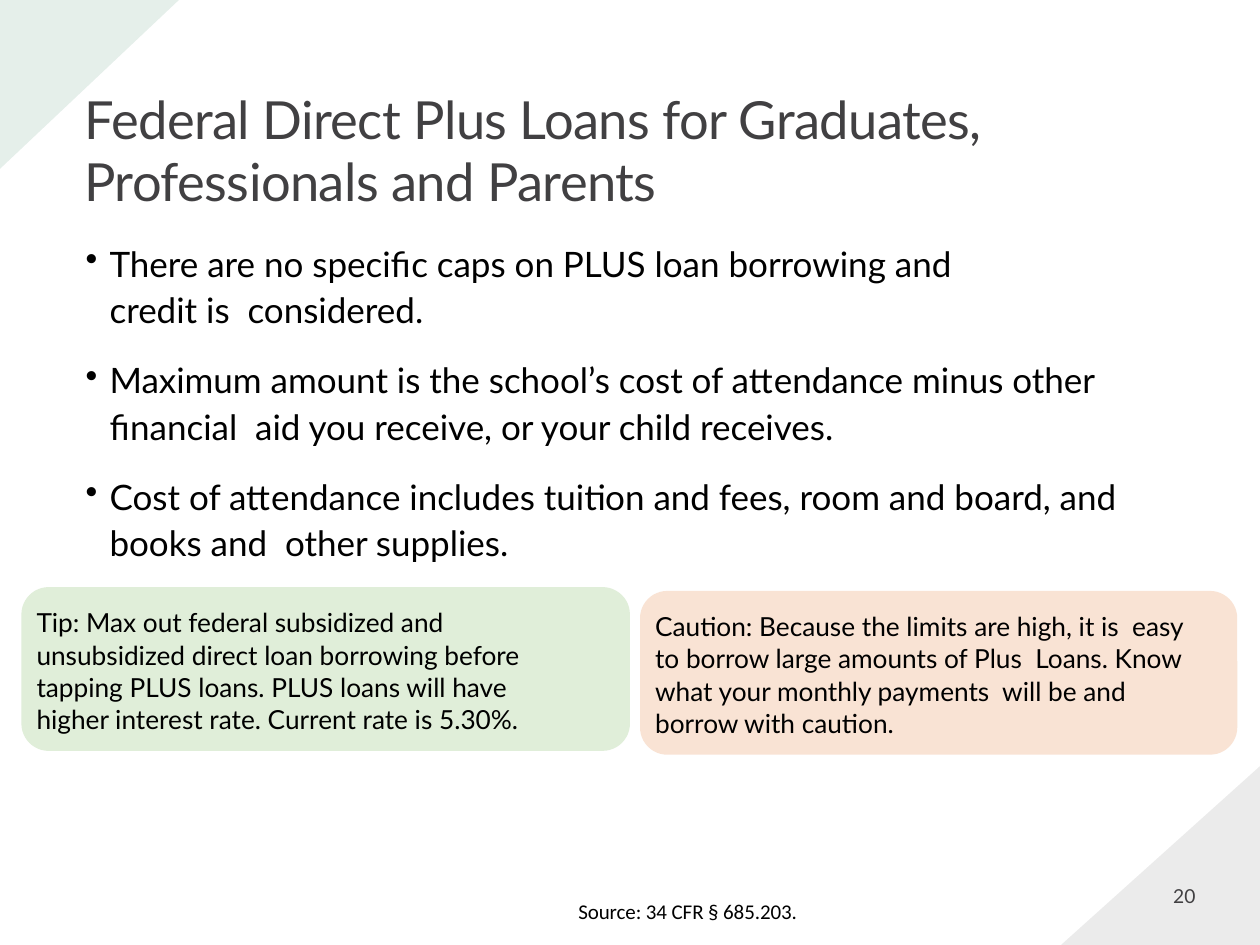
from lxml import etree
from pptx import Presentation
from pptx.dml.color import RGBColor
from pptx.enum.shapes import MSO_SHAPE
from pptx.enum.text import MSO_ANCHOR, MSO_AUTO_SIZE, PP_ALIGN
from pptx.oxml.ns import qn
from pptx.util import Inches, Pt

TRIANGLE = MSO_SHAPE.RIGHT_TRIANGLE
ROUNDED = MSO_SHAPE.ROUNDED_RECTANGLE
TOP, BOTTOM = MSO_ANCHOR.TOP, MSO_ANCHOR.BOTTOM
LEFT = PP_ALIGN.LEFT
NO_AUTOFIT = MSO_AUTO_SIZE.NONE

COLORS = {
    "text": "000000",
    "gray": "414042",
    "green": "056839",
    "tip": "E0EED9",
    "caution": "F9E3D4",
}
FONT = "Lato"
SOURCE_FONT = "Calibri"

TITLE = "Federal Direct Plus Loans for Graduates, Professionals and Parents"
# Each bullet: text, right margin in inches
BULLETS = [
    ("There are no specific caps on PLUS loan borrowing and credit is  considered.", 1),
    ("Maximum amount is the school’s cost of attendance minus other "
     "financial  aid you receive, or your child receives.", 0),
    ("Cost of attendance includes tuition and fees, room and board, and "
     "books and  other supplies.", 0),
]
TIP = ("Tip: Max out federal subsidized and unsubsidized direct loan borrowing "
       "before tapping PLUS loans. PLUS loans will have higher interest rate. "
       "Current rate is 5.30%.")
CAUTION = ("Caution: Because the limits are high, it is  easy to borrow large "
           "amounts of Plus  Loans. Know what your monthly payments  will be and "
           "borrow with caution.")


def rgb(name):
    return RGBColor.from_string(COLORS[name])


def inches(box):
    return [Inches(v) for v in box]


def setup_frame(tf, top_inset=0, anchor=TOP):
    tf.word_wrap = True
    tf.auto_size = NO_AUTOFIT
    tf.vertical_anchor = anchor
    tf.margin_left = tf.margin_right = tf.margin_bottom = 0
    tf.margin_top = Inches(top_inset)


def add_run(p, text, size, color="text", font=FONT, spacing=0):
    """Add a run; spacing is the letter spacing in points."""
    p.alignment = LEFT
    r = p.add_run()
    r.text = text
    r.font.size = Pt(size)
    r.font.name = font
    r.font.color.rgb = rgb(color)
    if spacing:
        r.font._element.set("spc", str(round(spacing * 100)))


def set_margins(p, left=0, right=0, indent=0):
    pPr = p._p.get_or_add_pPr()
    for key, value in (("marL", left), ("marR", right), ("indent", indent)):
        pPr.set(key, str(Inches(value)))


def add_text(s, box, text, size, line_spacing=None, top_inset=0, left=0, right=0, **style):
    tf = s.shapes.add_textbox(*inches(box)).text_frame
    setup_frame(tf, top_inset)
    p = tf.paragraphs[0]
    set_margins(p, left, right)
    if line_spacing:
        p.line_spacing = Pt(line_spacing)
    add_run(p, text, size, **style)


def add_filled(s, shape, box, color):
    sp = s.shapes.add_shape(shape, *inches(box))
    sp.shadow.inherit = False
    sp.fill.solid()
    sp.fill.fore_color.rgb = rgb(color)
    sp.line.fill.background()
    return sp


def add_corner(s, box, color, rotation, flip=False):
    sp = add_filled(s, TRIANGLE, box, color)
    sp.rotation = rotation
    if flip:
        sp._element.spPr.xfrm.set("flipV", "1")
    clr = sp._element.spPr.find(qn("a:solidFill"))[0]
    etree.SubElement(clr, qn("a:alpha")).set("val", "10000")


def add_title(s, box):
    title = s.shapes.title
    title.left, title.top, title.width, title.height = inches(box)
    tf = title.text_frame
    setup_frame(tf, 0.07, BOTTOM)
    p = tf.paragraphs[0]
    p.line_spacing = Pt(35)
    add_run(p, TITLE, 30, "gray", spacing=-0.35)


def add_bullets(s, box):
    tf = s.shapes.add_textbox(*inches(box)).text_frame
    setup_frame(tf, 0.01)
    for i, (text, right) in enumerate(BULLETS):
        p = tf.add_paragraph() if i else tf.paragraphs[0]
        set_margins(p, 0.2, right, -0.19)
        etree.SubElement(p._p.get_or_add_pPr(), qn("a:buChar")).set("char", "•")
        p.line_spacing = 1.1
        if i:
            p.space_before = Pt(13.9)
        add_run(p, text, 20, spacing=-0.04)


def add_card(s, box, color, text, right=0):
    x, y, w, h = box
    add_filled(s, ROUNDED, box, color)
    add_text(s, (x + 0.12, y + 0.1, 4.3, 1.08), text, 15, 18.4, 0.05, right=right)


def main():
    prs = Presentation()
    prs.slide_width, prs.slide_height = Inches(10), Inches(7.5)
    s = prs.slides.add_slide(prs.slide_layouts[5])

    # Corner decoration
    add_corner(s, (8.42, 6.08, 1.58, 1.42), "gray", 180, flip=True)
    add_corner(s, (0.04, -0.04, 1.34, 1.42), "green", 90)

    # Title and bullets
    add_title(s, (0.67, 0.63, 7.52, 1.05))
    add_bullets(s, (0.67, 1.88, 8.46, 2.6))

    # Advice cards
    add_card(s, (0.17, 4.66, 4.83, 1.3), "tip", TIP, right=0.3)
    add_card(s, (5.08, 4.69, 4.74, 1.3), "caution", CAUTION)

    # Page number and source
    add_text(s, (9.27, 7.01, 0.25, 0.21), "20", 11, top_inset=0.01, left=0.04, color="gray")
    add_text(s, (4.59, 7.16, 1.76, 0.19), "Source: 34 CFR § 685.203.", 12, 12.4,
             font=SOURCE_FONT, spacing=-0.06)

    prs.save("out.pptx")


if __name__ == "__main__":
    main()
